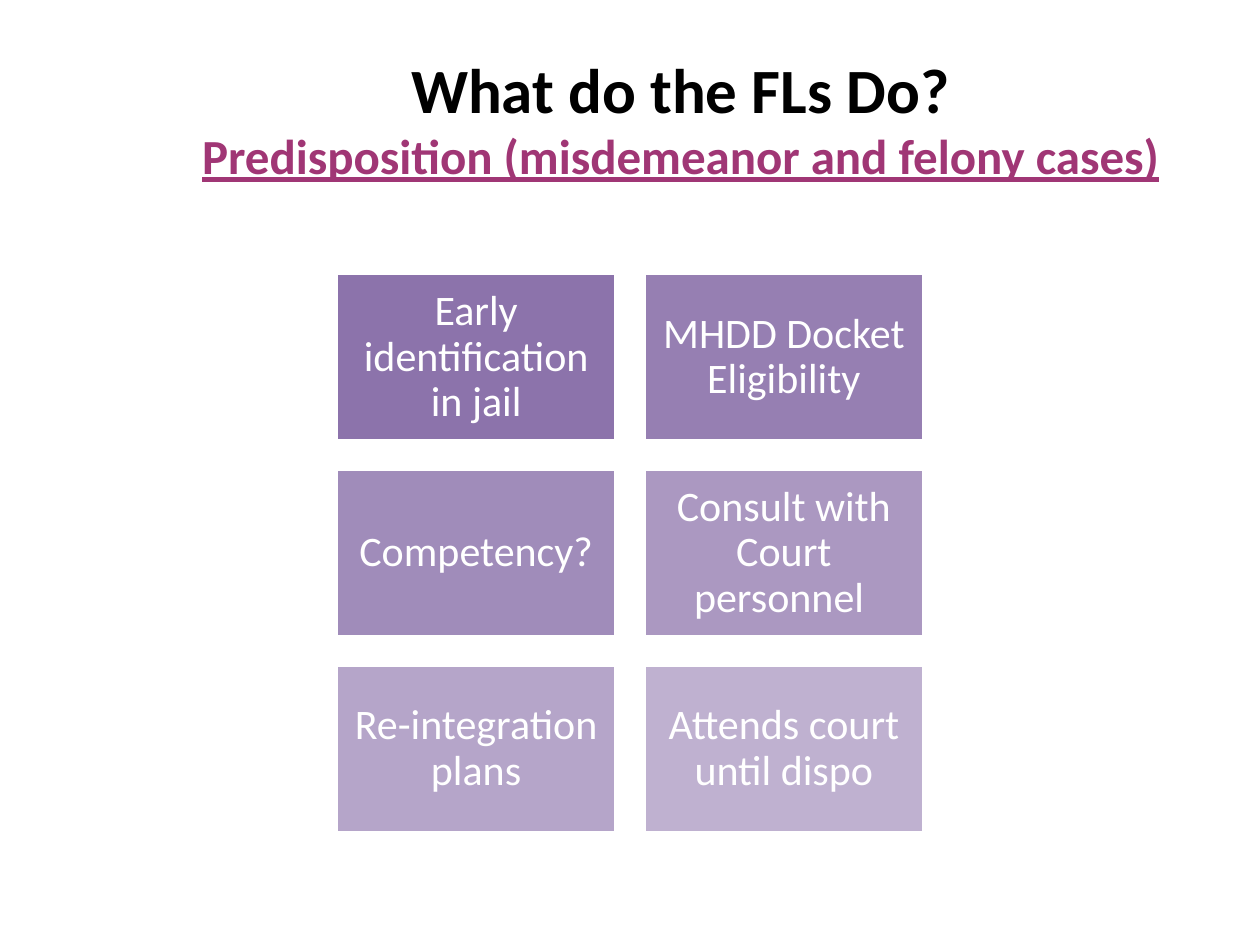
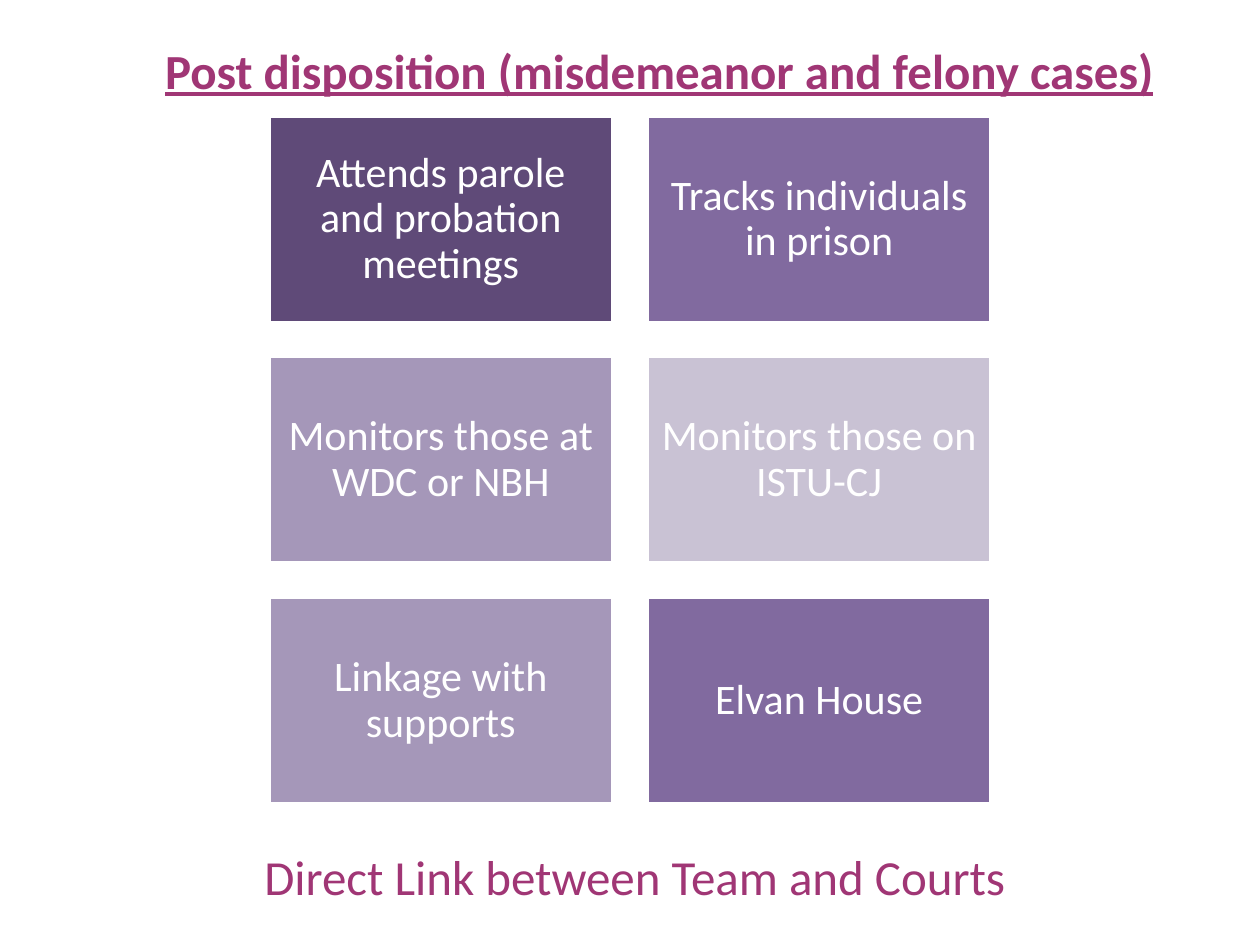
"""Build two slides on the work of the FLs before and after disposition."""
from lxml import etree
from pptx import Presentation
from pptx.dml.color import RGBColor
from pptx.enum import shapes, text as txt
from pptx.oxml import ns
from pptx.util import Inches, Pt

HUES = {
    "ink": "000000", "white": "FFFFFF", "plum": "A03675", "violet": "8064A2",
    "dark": "5F4A78", "mid": "816A9F", "soft": "A597B9", "pale": "C9C2D4",
}
FONT = "Calibri"
WIDE, HIGH = 10, 7.5


def hue(name):
    """Return the named colour."""
    return RGBColor.from_string(HUES[name])


def write(para, words, size=24, color="white", bold=False, line=False,
          align=txt.PP_ALIGN.CENTER, lead=1.0):
    """Put formatted words into a paragraph."""
    para.alignment = align
    para.line_spacing = lead
    run = para.add_run()
    run.text = words
    font = run.font
    font.name, font.size, font.bold = FONT, Pt(size), bold
    font.underline = line
    font.color.rgb = hue(color)


class Deck:
    """Hold the style and the current slide."""

    def __init__(self):
        """Start an empty deck."""
        self.prs = Presentation()
        self.prs.slide_width = Inches(WIDE)
        self.prs.slide_height = Inches(HIGH)
        self.slide = None

    def page(self):
        """Add a blank slide."""
        self.slide = self.prs.slides.add_slide(self.prs.slide_layouts[6])

    def box(self, left, top, width, height):
        """Add a text box and return its frame."""
        place = map(Inches, (left, top, width, height))
        frame = self.slide.shapes.add_textbox(*place).text_frame
        frame.word_wrap = True
        return frame

    def title(self, left, top, sub, head=None):
        """Add an underlined heading, below a main title if given."""
        frame = self.box(left, top, 9.25, 1.3 if head else 0.6)
        frame.margin_left = Inches(0.15)
        para = frame.paragraphs[0]
        if head:
            write(para, head, size=36, color="ink", bold=True)
            para = frame.add_paragraph()
        write(para, sub, size=28, color="plum", bold=True, line=True)

    def note(self, left, top, width, words):
        """Add a plain closing line."""
        write(self.box(left, top, width, 0.57).paragraphs[0], words, size=28,
              color="plum", align=txt.PP_ALIGN.LEFT)

    def tile(self, left, top, width, height, words, color, alpha):
        """Add one filled tile with centred words."""
        tile = self.slide.shapes.add_shape(
            shapes.MSO_SHAPE.RECTANGLE, *map(Inches, (left, top, width, height)))
        tile.shadow.inherit = False
        tile.fill.solid()
        tile.fill.fore_color.rgb = hue(color)
        if alpha < 100:
            tone = tile.fill._xPr.find(".//" + ns.qn("a:srgbClr"))
            etree.SubElement(tone, ns.qn("a:alpha"), val=str(alpha * 1000))
        tile.line.color.rgb = hue("white")
        tile.line.width = Pt(2)
        frame = tile.text_frame
        frame.word_wrap = True
        frame.vertical_anchor = txt.MSO_ANCHOR.MIDDLE
        frame.margin_left = frame.margin_right = Inches(0.1)
        frame.margin_top = frame.margin_bottom = Inches(0.1)
        write(frame.paragraphs[0], words, lead=0.9)

    def grid(self, top, width, tiles):
        """Lay tiles in two centred columns with equal gaps."""
        height, gap = width * 0.6, width * 0.1
        left = (WIDE - 2 * width - gap) / 2
        for i, tile in enumerate(tiles):
            row, col = divmod(i, 2)
            self.tile(left + col * (width + gap), top + row * (height + gap),
                      width, height, *tile)


def main():
    """Build and save the deck."""
    deck = Deck()

    deck.page()
    deck.title(0.75, 0.35, "Predisposition (misdemeanor and felony cases)",
               head="What do the FLs Do?")
    tasks = ["Early identification in jail", "MHDD Docket Eligibility",
             "Competency?", "Consult with Court personnel ",
             "Re-integration plans", "Attends court until dispo"]
    deck.grid(2.17, 2.22, [(task, "violet", 90 - 8 * i)
                           for i, task in enumerate(tasks)])

    deck.page()
    deck.title(0.58, 0.27, "Post disposition (misdemeanor and felony cases)")
    tasks = [("Attends parole and probation meetings", "dark"),
             ("Tracks individuals in prison", "mid"),
             ("Monitors those at WDC or NBH", "soft"),
             ("Monitors those on ISTU-CJ", "pale"),
             ("Linkage with supports", "soft"),
             ("Elvan House", "mid")]
    deck.grid(0.92, 2.73, [(*task, 100) for task in tasks])
    deck.note(2, 6.67, 6.12, "Direct Link between Team and Courts")

    deck.prs.save("out.pptx")


if __name__ == "__main__":
    main()
